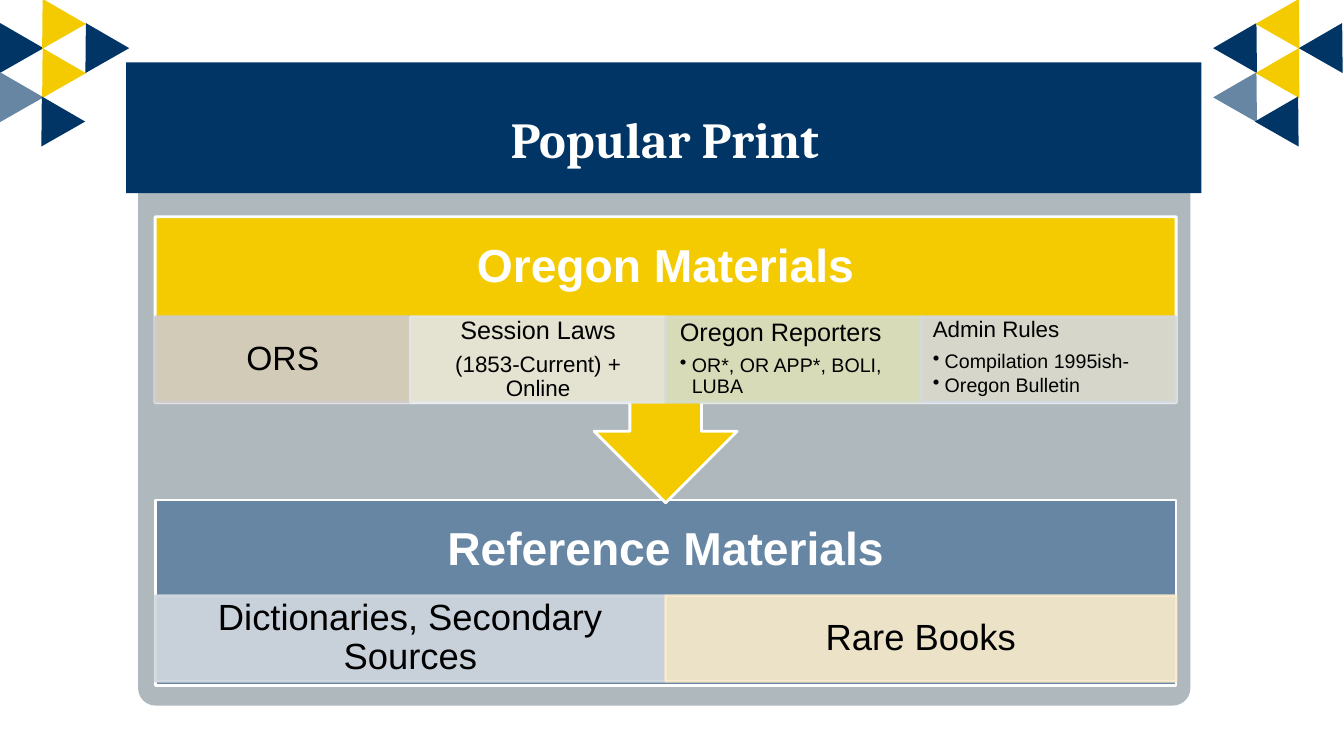
from lxml.etree import SubElement
from pptx import Presentation
from pptx.dml.color import RGBColor
from pptx.enum.shapes import MSO_SHAPE
from pptx.enum.text import MSO_ANCHOR, PP_ALIGN
from pptx.oxml.ns import qn
from pptx.util import Cm, Pt

NAVY = RGBColor(0x00, 0x35, 0x66)
GOLD = RGBColor(0xF4, 0xCB, 0x00)
SLATE = RGBColor(0x66, 0x86, 0xA3)
GRAY = RGBColor(0xAF, 0xB8, 0xBD)
ROSE = RGBColor(0xCF, 0xCC, 0xCD)
MIST = RGBColor(0xE3, 0xE6, 0xE8)
SAGE = RGBColor(0xD4, 0xDD, 0xCC)
ICE = RGBColor(0xD3, 0xD9, 0xE0)
CREAM = RGBColor(0xFB, 0xEC, 0xCC)
WHITE = RGBColor(0xFF, 0xFF, 0xFF)
BLACK = RGBColor(0x00, 0x00, 0x00)

deck = Presentation()
deck.slide_width, deck.slide_height = Cm(33.87), Cm(19.05)
slide = deck.slides.add_slide(deck.slide_layouts[5])
shapes = slide.shapes


def draw(kind, box, fill, line=None, width=2):
    shape = shapes.add_shape(kind, *[Cm(v) for v in box])
    shape.shadow.inherit = False
    shape.fill.solid()
    shape.fill.fore_color.rgb = fill
    if line is None:
        shape.line.fill.background()
    else:
        shape.line.color.rgb = line
        shape.line.width = Pt(width)
    return shape


def write(shape, paras, pad, color=BLACK, bold=False, align=PP_ALIGN.CENTER,
          anchor=MSO_ANCHOR.MIDDLE, face="Arial"):
    """Fill a shape with (text, size, bulleted) paragraphs."""
    frame = shape.text_frame
    side, edge = Cm(pad[0]), Cm(pad[1])
    look = {"word_wrap": True, "vertical_anchor": anchor,
            "margin_left": side, "margin_right": side,
            "margin_top": edge, "margin_bottom": edge}
    for name, value in look.items():
        setattr(frame, name, value)
    for i, (text, size, dot) in enumerate(paras):
        para = frame.add_paragraph() if i else frame.paragraphs[0]
        if dot:
            props = para._p.get_or_add_pPr()
            props.set("marL", str(Cm(0.3)))
            props.set("indent", str(-Cm(0.3)))
            SubElement(props, qn("a:buChar")).set("char", "•")
        para.alignment = align
        para.line_spacing = 0.9
        para.space_after = Pt(round(size * (0.15 if dot else 0.35)))
        run = para.add_run()
        run.text = text
        font = {"name": face, "size": Pt(size), "bold": bold}
        for name, value in font.items():
            setattr(run.font, name, value)
        run.font.color.rgb = color


# Panel and title banner
panel = draw(MSO_SHAPE.ROUNDED_RECTANGLE, (3.48, 4.04, 26.52, 13.74), GRAY)
panel.adjustments[0] = 0.032
draw(MSO_SHAPE.RECTANGLE, (3.18, 1.57, 27.1, 3.3), NAVY)

# Corner triangles: the right cluster repeats the left one, turned the other way
corner = [(-0.36, 0.51, NAVY), (0.71, -0.1, GOLD), (1.8, 0.51, NAVY),
          (-0.36, 1.75, SLATE), (0.71, 1.14, GOLD), (0.69, 2.36, NAVY)]
for shift, turn in ((0, -29.7), (31.12, 29.7)):
    for x, y, fill in corner:
        tri = draw(MSO_SHAPE.ISOSCELES_TRIANGLE, (x + shift, y, 1.27, 1.09), fill)
        tri.rotation = turn

# Title, brought in front of the banner
title = shapes.title
spot = {"left": 3.58, "top": 2.34, "width": 26.34, "height": 2.49}
for name, value in spot.items():
    setattr(title, name, Cm(value))
write(title, [("Popular Print", 36, False)], (0.25, 0.13), WHITE, True, face="Cambria")
shapes._spTree.append(title._element)

# Two blocks: the lower one first, so that the arrow lies over it
LEFT, WIDE, CELL = 3.91, 25.73, 2.16
mid = (PP_ALIGN.CENTER, MSO_ANCHOR.MIDDLE)
high = (PP_ALIGN.LEFT, MSO_ANCHOR.TOP)
books = [
    (CREAM if i else ICE, (0.5, 0.1), mid, [(text, 26, False)])
    for i, text in enumerate(("Dictionaries, Secondary Sources", "Rare Books"))
]
laws = [
    (ROSE, (0.48, 0.08), mid, [("ORS", 24, False)]),
    (MIST, (0.36, 0.08), mid, [("Session Laws", 18, False),
                               ("(1853-Current) + Online", 16, False)]),
    (SAGE, (0.36, 0.08), high, [("Oregon Reporters", 18, False),
                                ("OR*, OR APP*, BOLI, LUBA", 14, True)]),
    (ICE, (0.3, 0.05), high, [("Admin Rules", 16, False),
                              ("Compilation 1995ish-", 14, True),
                              ("Oregon Bulletin", 14, True)]),
]
blocks = [
    ("Reference Materials", MSO_SHAPE.RECTANGLE, 0, 12.6, 4.67, SLATE, 15.01, books),
    ("Oregon Materials", MSO_SHAPE.UP_ARROW_CALLOUT, 180, 5.46, 7.21, GOLD, 7.98, laws),
]
for head, kind, turn, top, tall, fill, row, cells in blocks:
    draw(kind, (LEFT, top, WIDE, tall), fill, WHITE).rotation = turn
    label = shapes.add_textbox(Cm(LEFT), Cm(top), Cm(WIDE), Cm(2.54))
    write(label, [(head, 33, False)], (0.66, 0.66), WHITE, True)
    step = WIDE / len(cells)
    for i, (tint, pad, (align, anchor), paras) in enumerate(cells):
        box = (LEFT + i * step, row, step, CELL)
        cell = draw(MSO_SHAPE.RECTANGLE, box, tint, tint, 1.75)
        # Fill and line are slightly see-through
        for clr in cell._element.spPr.iter(qn("a:srgbClr")):
            SubElement(clr, qn("a:alpha")).set("val", "90000")
        write(cell, paras, pad, align=align, anchor=anchor)

deck.save("out.pptx")
